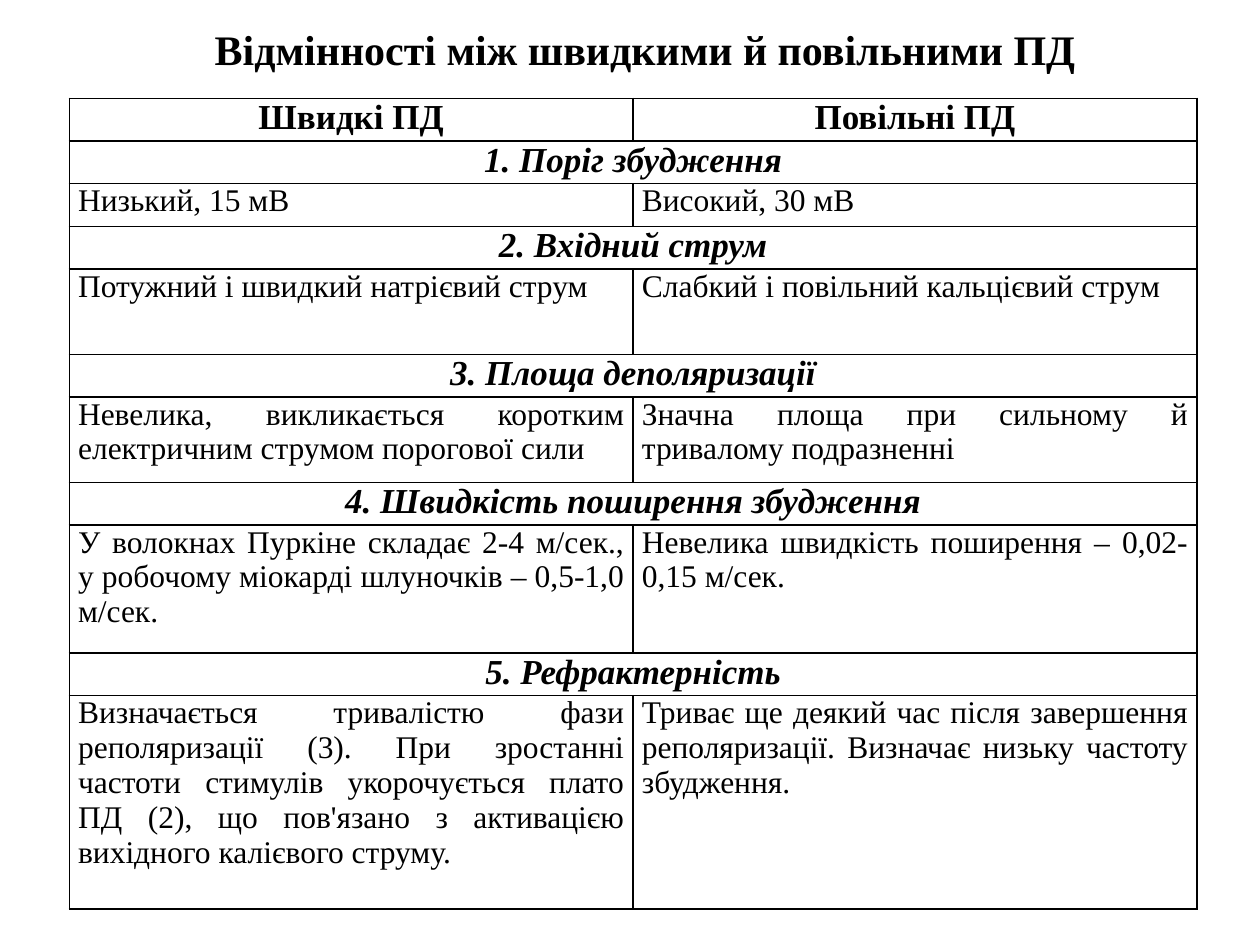
"""Build a slide with a table comparing fast and slow action potentials."""
from lxml.etree import SubElement
from pptx import Presentation
from pptx.dml.color import RGBColor
from pptx.enum.text import MSO_ANCHOR, PP_ALIGN
from pptx.oxml.ns import qn
from pptx.util import Inches, Pt

COLORS = {"ink": "000000", "paper": "FFFFFF"}
ROW_UNIT = 6.44 / 19

HEADERS = ("Швидкі ПД", "Повільні ПД")
SECTIONS = (
    ("1. Поріг збудження", 1, "Низький, 15 мВ", "Високий, 30 мВ"),
    ("2. Вхідний струм", 2, "Потужний і швидкий натрієвий струм",
     "Слабкий і повільний кальцієвий струм"),
    ("3. Площа деполяризації", 2,
     "Невелика, викликається коротким електричним струмом порогової сили",
     "Значна площа при сильному й тривалому подразненні"),
    ("4. Швидкість поширення збудження", 3,
     "У волокнах Пуркіне складає 2-4 м/сек., у робочому міокарді шлуночків – 0,5-1,0 м/сек.",
     "Невелика швидкість поширення – 0,02-0,15 м/сек."),
    ("5. Рефрактерність", 5,
     "Визначається тривалістю фази реполяризації (3). При зростанні частоти стимулів "
     "укорочується плато ПД (2), що пов'язано з активацією вихідного калієвого струму.",
     "Триває ще деякий час після завершення реполяризації. Визначає низьку частоту збудження."),
)


def write_text(frame, text, size=20, bold=True, italic=False, align=PP_ALIGN.CENTER):
    frame.word_wrap = True
    paragraph = frame.paragraphs[0]
    paragraph.alignment = align
    run = paragraph.add_run()
    run.text = text
    font = run.font
    font.name, font.size, font.bold, font.italic = "Times New Roman", Pt(size), bold, italic
    font.color.rgb = RGBColor.from_string(COLORS["ink"])


class SlideBuilder:
    def __init__(self, presentation):
        self.slide = presentation.slides.add_slide(presentation.slide_layouts[6])

    def title(self, text, left, top, width, height):
        shape = self.slide.shapes.add_textbox(*map(Inches, (left, top, width, height)))
        shape.text_frame.vertical_anchor = MSO_ANCHOR.MIDDLE
        write_text(shape.text_frame, text, size=24)

    def table(self, row_units, left, top, width):
        height = sum(row_units) * ROW_UNIT
        table = self.slide.shapes.add_table(
            len(row_units), 2, *map(Inches, (left, top, width, height))).table
        for row, units in zip(table.rows, row_units):
            row.height = Inches(units * ROW_UNIT)
            for cell in row.cells:
                self.style_cell(cell)
        return table

    def style_cell(self, cell):
        cell.margin_left = cell.margin_right = Inches(0.07)
        cell.margin_top = cell.margin_bottom = 0
        properties = cell._tc.get_or_add_tcPr()
        for side in ("a:lnL", "a:lnR", "a:lnT", "a:lnB"):
            line = SubElement(properties, qn(side), w=str(Pt(1)))
            SubElement(SubElement(line, qn("a:solidFill")), qn("a:srgbClr"), val=COLORS["ink"])
        cell.fill.solid()
        cell.fill.fore_color.rgb = RGBColor.from_string(COLORS["paper"])

    def heading_row(self, table, row, text):
        table.cell(row, 0).merge(table.cell(row, 1))
        write_text(table.cell(row, 0).text_frame, text, italic=True)

    def pair_row(self, table, row, texts, **style):
        for column, text in enumerate(texts):
            write_text(table.cell(row, column).text_frame, text, **style)


def main():
    presentation = Presentation()
    presentation.slide_width, presentation.slide_height = Inches(10), Inches(7.5)
    builder = SlideBuilder(presentation)
    builder.title("Відмінності між швидкими й повільними ПД", 0.62, 0, 9, 0.78)
    row_units = [1]
    for section in SECTIONS:
        row_units += [1, section[1]]
    table = builder.table(row_units, 0.55, 0.78, 8.95)
    builder.pair_row(table, 0, HEADERS)
    for index, (heading, _, fast, slow) in enumerate(SECTIONS):
        row = 1 + 2 * index
        builder.heading_row(table, row, heading)
        builder.pair_row(table, row + 1, (fast, slow),
                         size=18, bold=False, align=PP_ALIGN.JUSTIFY)
    presentation.save("out.pptx")


if __name__ == "__main__":
    main()
